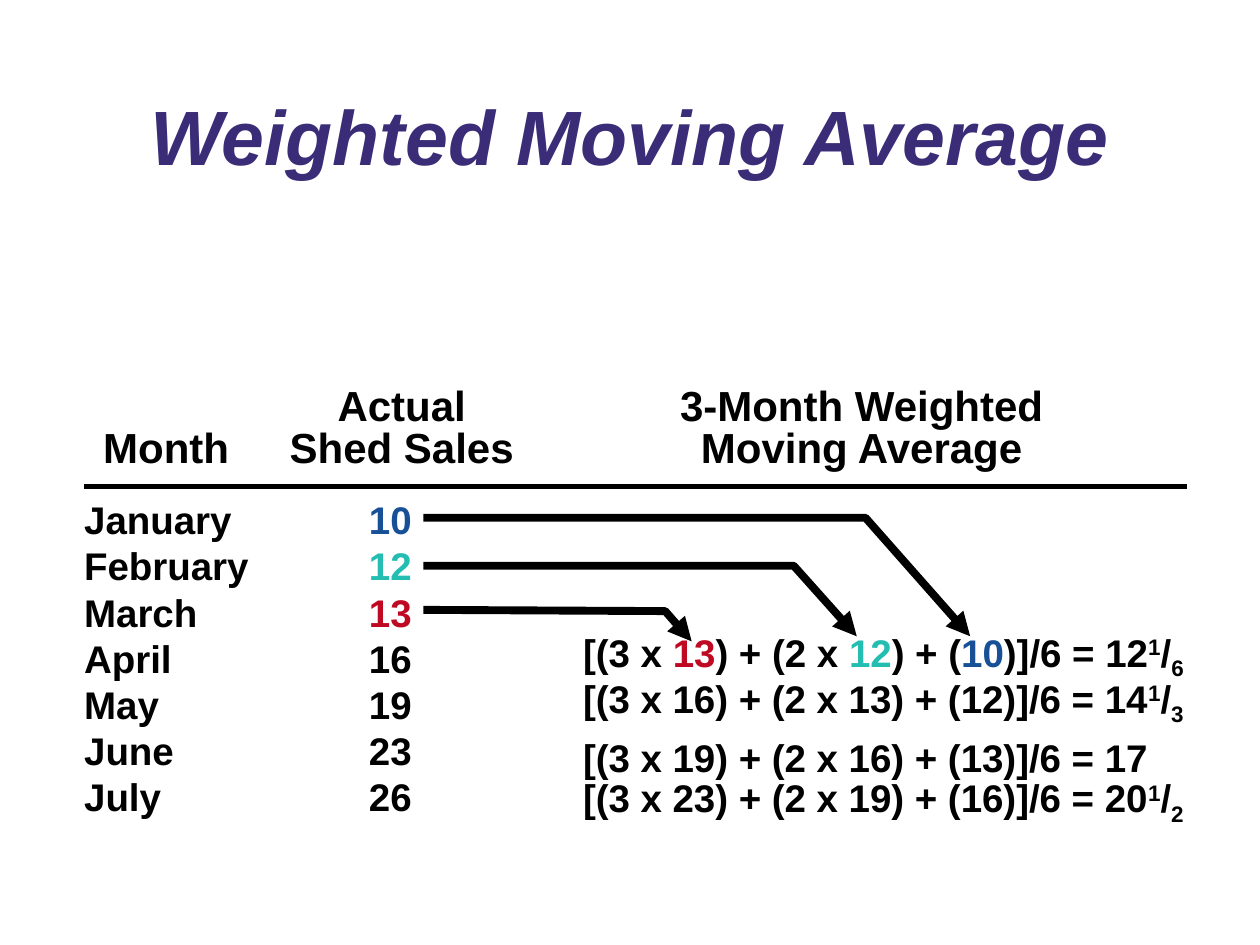
import pptx
import pptx.util
import pptx.dml.color
import pptx.enum.shapes
import pptx.enum.text
import pptx.oxml.ns
import lxml.etree

Inches, Pt = pptx.util.Inches, pptx.util.Pt
ALIGN = pptx.enum.text.PP_ALIGN
ANCHOR = pptx.enum.text.MSO_ANCHOR

COLORS = {"ink": "000000", "title": "3A2C76", "blue": "175097", "teal": "24BDB2", "red": "BF0922"}

# Content
TITLE = "Weighted Moving Average"
HEADER = ["\t\tActual\t3-Month Weighted", "\tMonth\tShed Sales\tMoving Average"]
SALES = [("January", 10, "blue"), ("February", 12, "teal"), ("March", 13, "red"),
         ("April", 16, "ink"), ("May", 19, "ink"), ("June", 23, "ink"), ("July", 26, "ink")]
AVERAGES = [("12", "1", "6"), ("14", "1", "3"), ("17", "", ""), ("20", "1", "2")]
ARROWS = [
    [(3.36, 4.11), (6.87, 4.11), (7.7, 5.05)],
    [(3.36, 4.49), (6.3, 4.49), (6.8, 5.05)],
    [(3.36, 4.84), (5.28, 4.85), (5.49, 5.09)],
]

# Layout
BODY_TOP = 3.89
ROW_POINTS = 26.4
WINDOW = 3

presentation = pptx.Presentation()
presentation.slide_width, presentation.slide_height = Inches(10), Inches(7.5)
slide = presentation.slides.add_slide(presentation.slide_layouts[6])


def rgb(name):
    return pptx.dml.color.RGBColor.from_string(COLORS[name])


def add_child(parent, tag, **attributes):
    child = lxml.etree.SubElement(parent, pptx.oxml.ns.qn(tag))
    for name, value in attributes.items():
        child.set(name, str(value))
    return child


def add_text(lines, box, size, color="ink", italic=False, align=ALIGN.LEFT,
             anchor=ANCHOR.TOP, spacing=1.0, tabs=(), gaps=None):
    """Each line is a string or a list of (text, color, baseline) runs."""
    shape = slide.shapes.add_textbox(*map(Inches, box))
    frame = shape.text_frame
    frame.word_wrap = True
    frame.vertical_anchor = anchor
    for index, line in enumerate(lines):
        paragraph = frame.paragraphs[0] if index == 0 else frame.add_paragraph()
        paragraph.alignment = align
        paragraph.line_spacing = spacing
        if gaps and index in gaps:
            paragraph.space_before = Pt(gaps[index])
        if tabs:
            stops = add_child(paragraph._p.get_or_add_pPr(), "a:tabLst")
            for position in tabs:
                add_child(stops, "a:tab", pos=Inches(position), algn="ctr")
        for text, run_color, baseline in [(line, color, 0)] if isinstance(line, str) else line:
            run = paragraph.add_run()
            run.text = text
            font = run.font
            font.name, font.size, font.bold, font.italic = "Arial", Pt(size), True, italic
            font.color.rgb = rgb(run_color)
            if baseline:
                run._r.get_or_add_rPr().set("baseline", str(baseline))
    return shape


def formula(row, whole, numerator, denominator):
    """Weights the three months before the row, newest first."""
    runs = []
    for weight, opening in zip((3, 2, 1), ("[(3 x ", ") + (2 x ", ") + (")):
        _, value, color = SALES[row - (WINDOW + 1 - weight)]
        runs += [(opening, "ink", 0), (str(value), color if row == WINDOW else "ink", 0)]
    runs.append((f")]/6 = {whole}", "ink", 0))
    if numerator:
        runs += [(numerator, "ink", 30000), ("/", "ink", 0), (denominator, "ink", -25000)]
    return runs


# Title and column headings
add_text([TITLE], (0.75, 0.6, 8.5, 1.03), 44, color="title", italic=True,
         align=ALIGN.CENTER, anchor=ANCHOR.MIDDLE, spacing=0.9)
add_text(HEADER, (0.59, 3.03, 8.9, 0.78), 24, spacing=Pt(24), tabs=(0.63, 2.5, 6.15))

# Rule under the headings
rule = slide.shapes.add_connector(pptx.enum.shapes.MSO_CONNECTOR.STRAIGHT,
                                  Inches(0.67), Inches(3.86), Inches(9.42), Inches(3.86))
rule.line.color.rgb = rgb("ink")
rule.line.width = Pt(3)
add_child(rule._element.spPr, "a:effectLst")

# Months with sales, then the averages from the fourth month on
add_text([[(f"{month}\t", "ink", 0), (str(value), color, 0)] for month, value, color in SALES],
         (0.57, BODY_TOP, 3.5, 2.66), 22, spacing=Pt(ROW_POINTS), tabs=(2.43,))
add_text([formula(row, *average) for row, average in enumerate(AVERAGES, WINDOW)],
         (4.53, BODY_TOP + WINDOW * ROW_POINTS / 72, 5.1, 1.62), 22,
         spacing=Pt(ROW_POINTS), gaps={2: 4})

# Arrows from the first sales to the first average
for start, *rest in ARROWS:
    builder = slide.shapes.build_freeform(*map(Inches, start))
    builder.add_line_segments([(Inches(x), Inches(y)) for x, y in rest], close=False)
    arrow = builder.convert_to_shape()
    arrow.shadow.inherit = False
    arrow.fill.background()
    arrow.line.color.rgb = rgb("ink")
    arrow.line.width = Pt(4.5)
    add_child(arrow.line._get_or_add_ln(), "a:tailEnd", type="triangle")

presentation.save("out.pptx")
